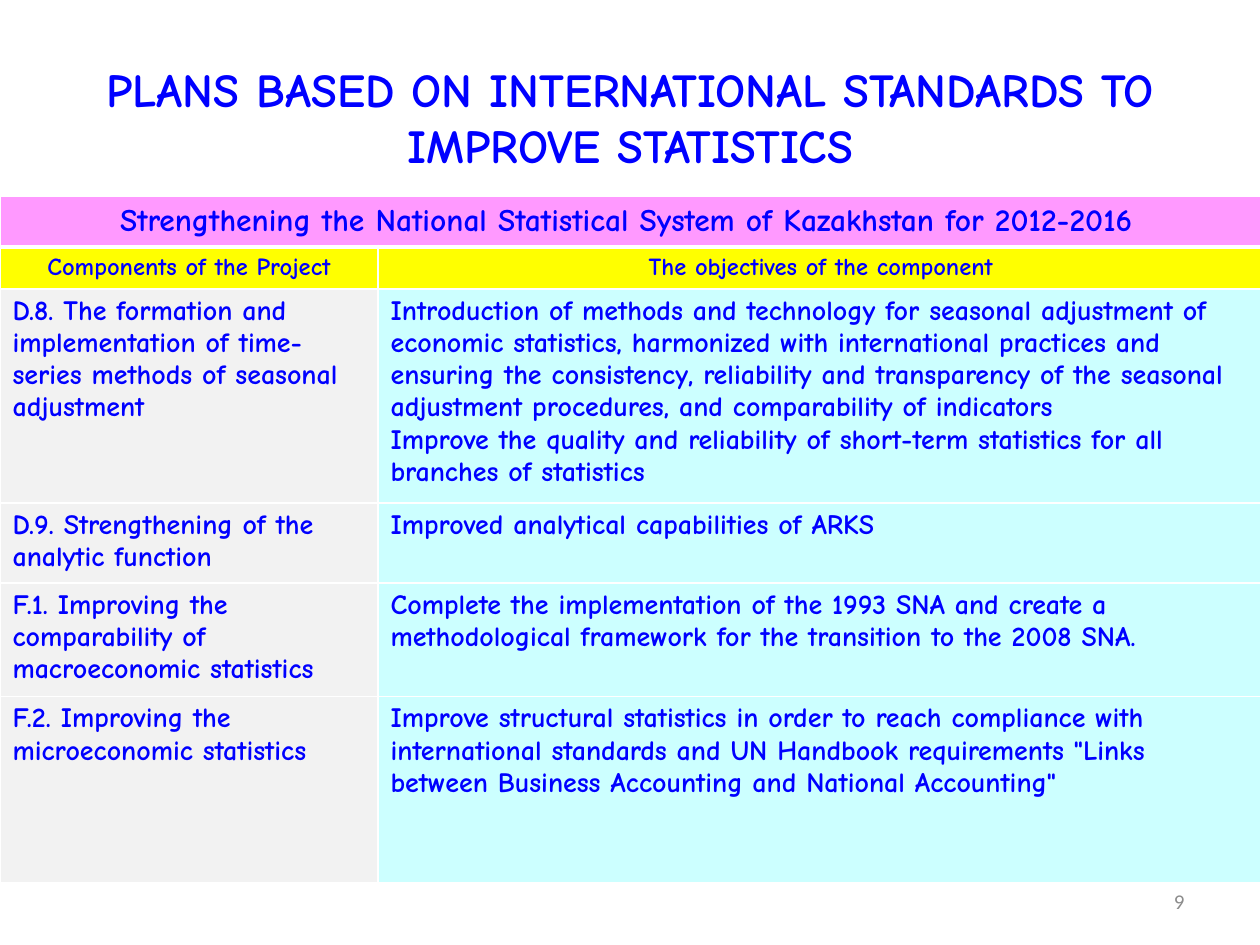
import pptx
import pptx.dml.color
import pptx.enum.text
import pptx.oxml.ns
import pptx.util
from lxml import etree

Inches = pptx.util.Inches
RGBColor = pptx.dml.color.RGBColor
PP_ALIGN = pptx.enum.text.PP_ALIGN
MIDDLE = pptx.enum.text.MSO_ANCHOR.MIDDLE

BLUE = RGBColor(0x00, 0x00, 0xFF)
GRAY = RGBColor(0x8C, 0x8C, 0x8C)
PINK = RGBColor(0xFF, 0x99, 0xFF)
YELLOW = RGBColor(0xFF, 0xFF, 0x00)
LIGHT_GRAY = RGBColor(0xF2, 0xF2, 0xF2)
LIGHT_CYAN = RGBColor(0xCC, 0xFF, 0xFF)
WHITE = RGBColor(0xFF, 0xFF, 0xFF)

TITLE = "PLANS BASED ON INTERNATIONAL STANDARDS TO IMPROVE STATISTICS"
PROGRAM = "Strengthening the National Statistical System of Kazakhstan for 2012-2016 "
HEADERS = ("Components of the Project", "The objectives of the component")
COMPONENTS = [
    ("D.8. The formation and implementation of time-series methods of seasonal adjustment",
     "Introduction of methods and technology for seasonal adjustment of economic statistics, "
     "harmonized with international practices and ensuring the consistency, reliability and "
     "transparency of the seasonal adjustment procedures, and comparability of indicators\n"
     "Improve the quality and reliability of short-term statistics for all branches of statistics"),
    ("D.9. Strengthening of the analytic function",
     "Improved analytical capabilities of ARKS"),
    ("F.1. Improving the comparability of macroeconomic statistics",
     "Complete the implementation of the 1993 SNA and create a methodological framework "
     "for the transition to the 2008 SNA."),
    ("F.2. Improving the microeconomic statistics",
     "Improve structural statistics in order to reach compliance with international standards "
     'and UN Handbook requirements "Links between Business Accounting and National Accounting"'),
]
COLUMN_WIDTHS = (3, 7.03)
ROW_HEIGHTS = (0.38, 0.33, 1.62, 0.62, 0.87, 1.48)


def write_text(frame, text, size=16, color=BLUE, font="Comic Neue", bold=True,
               align=PP_ALIGN.LEFT):
    """Fill a text frame, one paragraph for each line of text."""
    for index, line in enumerate(text.split("\n")):
        paragraph = frame.add_paragraph() if index else frame.paragraphs[0]
        paragraph.alignment = align
        run = paragraph.add_run()
        run.text = line
        run.font.size = pptx.util.Pt(size)
        run.font.name = font
        run.font.bold = bold
        run.font.color.rgb = color


def set_borders(cell, bottom=1):
    """Draw white cell borders; the bottom width is in points."""
    qn = pptx.oxml.ns.qn
    properties = cell._tc.get_or_add_tcPr()
    for side, width in (("L", 1), ("R", 1), ("T", 1), ("B", bottom)):
        line = etree.SubElement(properties, qn(f"a:ln{side}"), w=str(pptx.util.Pt(width)))
        fill = etree.SubElement(line, qn("a:solidFill"))
        etree.SubElement(fill, qn("a:srgbClr"), val=str(WHITE))


class SlideBuilder:
    """Holds the current slide and adds elements in its style."""

    def __init__(self, presentation):
        self.slide = presentation.slides.add_slide(presentation.slide_layouts[6])

    def add_text(self, text, left, top, width, height, **text_format):
        box = self.slide.shapes.add_textbox(
            Inches(left), Inches(top), Inches(width), Inches(height))
        box.text_frame.word_wrap = True
        box.text_frame.vertical_anchor = MIDDLE
        write_text(box.text_frame, text, **text_format)

    def add_table(self, left, top, widths, heights):
        table = self.slide.shapes.add_table(
            len(heights), len(widths), Inches(left), Inches(top),
            Inches(sum(widths)), Inches(sum(heights))).table
        for column, width in zip(table.columns, widths):
            column.width = Inches(width)
        for row, height in zip(table.rows, heights):
            row.height = Inches(height)
        return table

    def fill_cell(self, cell, text, fill, bottom=1, **text_format):
        set_borders(cell, bottom)
        cell.fill.solid()
        cell.fill.fore_color.rgb = fill
        write_text(cell.text_frame, text, **text_format)


def main():
    presentation = pptx.Presentation()
    presentation.slide_width = Inches(10)
    presentation.slide_height = Inches(7.5)
    builder = SlideBuilder(presentation)

    builder.add_text(TITLE, 0, 0.3, 10, 1.25, size=27, align=PP_ALIGN.CENTER)

    table = builder.add_table(0, 1.56, COLUMN_WIDTHS, ROW_HEIGHTS)
    table.cell(0, 0).merge(table.cell(0, 1))
    builder.fill_cell(table.cell(0, 0), PROGRAM, PINK, bottom=3, size=18,
                      align=PP_ALIGN.CENTER)
    set_borders(table.cell(0, 1), bottom=3)
    for column, header in enumerate(HEADERS):
        builder.fill_cell(table.cell(1, column), header, YELLOW, size=14,
                          align=PP_ALIGN.CENTER)
    for row, texts in enumerate(COMPONENTS, start=2):
        for column, fill in enumerate((LIGHT_GRAY, LIGHT_CYAN)):
            builder.fill_cell(table.cell(row, column), texts[column], fill)

    builder.add_text("9", 7.17, 6.95, 2.33, 0.4, size=12, color=GRAY, font="Calibri",
                     bold=False, align=PP_ALIGN.RIGHT)
    presentation.save("out.pptx")


if __name__ == "__main__":
    main()
